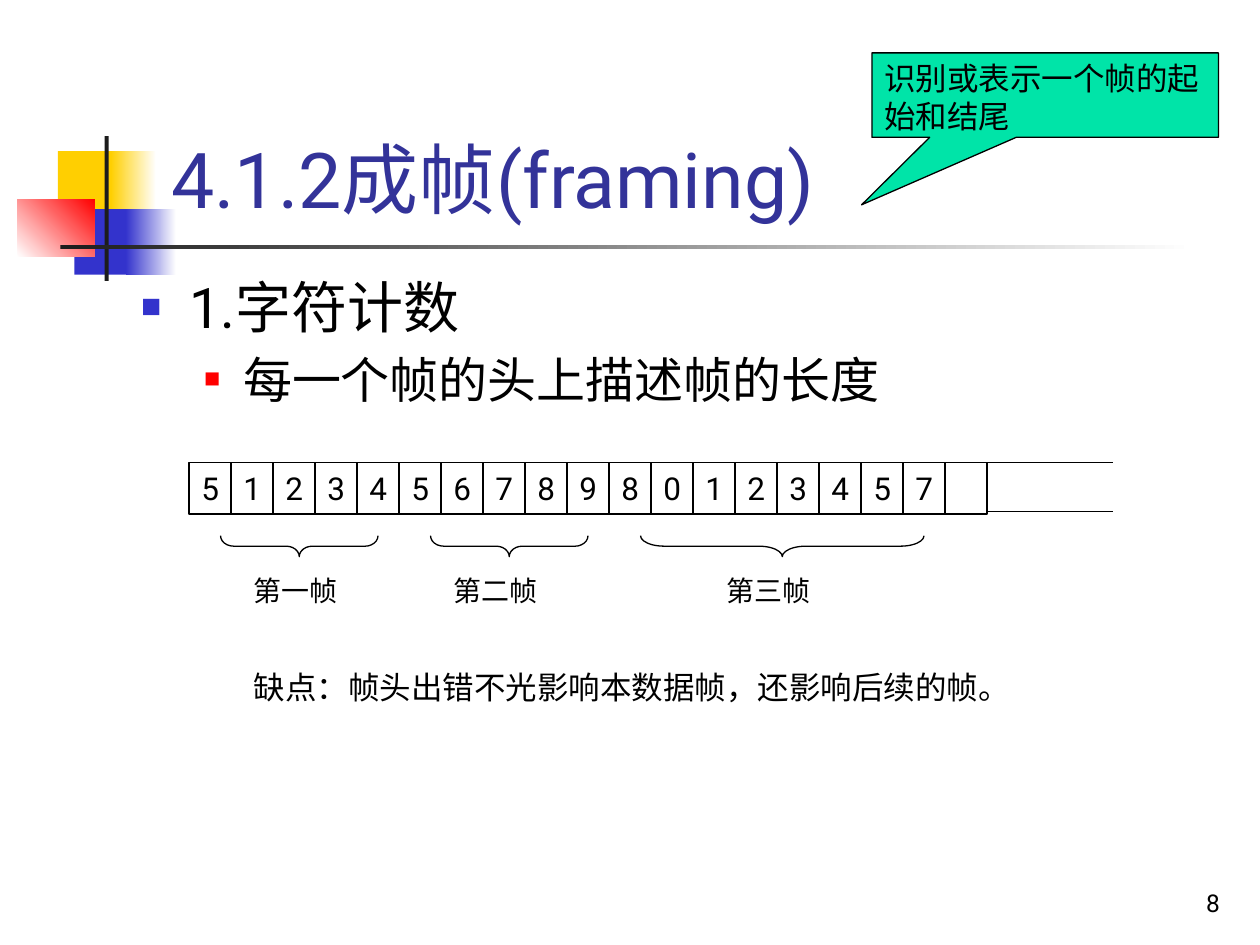
from lxml.etree import SubElement as Sub
from pptx import Presentation
from pptx.dml.color import RGBColor
from pptx.enum.shapes import MSO_CONNECTOR as Link, MSO_SHAPE as Form
from pptx.enum.text import MSO_ANCHOR as Anchor, PP_ALIGN as Align
from pptx.oxml.ns import qn
from pptx.util import Inches, Pt

deck = Presentation()
deck.slide_width, deck.slide_height = Inches(10), Inches(7.5)
col, row = deck.slide_width / 30, deck.slide_height / 30
slide = deck.slides.add_slide(deck.slide_layouts[1])
shapes = slide.shapes
hue = RGBColor.from_string


def draw(form, x, y, w, h, fills=(), line=None):
    item = shapes.add_shape(form, int(x * col), int(y * row), int(w * col), int(h * row))
    item.shadow.inherit = False
    if len(fills) == 2:
        item.fill.gradient()
        item.fill.gradient_angle = 0
        for stop, tint, spot in zip(item.fill.gradient_stops, fills, (0, 1)):
            stop.color.rgb = hue(tint)
            stop.position = spot
    elif fills:
        item.fill.solid()
        item.fill.fore_color.rgb = hue(fills[0])
    else:
        item.fill.background()
    if line:
        item.line.color.rgb = hue(line)
        item.line.width = Pt(0.75)
    else:
        item.line.fill.background()
    return item


def write(item, text, size, tint="000000", align=Align.LEFT, anchor=Anchor.TOP):
    frame = item.text_frame
    frame.text = text
    frame.word_wrap = True
    frame.vertical_anchor = anchor
    for para in frame.paragraphs:
        para.alignment = align
        for run in para.runs:
            run.font.name = "Roboto"
            run.font.size = Pt(size)
            run.font.color.rgb = hue(tint)


for x, y, w, h, fills in [
    (1.38, 4.8, 1.44, 2.08, ["FFCF01"]),
    (2.64, 4.8, 1.08, 2.08, ["FFCF01", "FFFFFF"]),
    (1.77, 6.64, 1.38, 2.08, ["3333CC"]),
    (3, 6.64, 1.2, 2.08, ["3333CC", "FFFFFF"]),
    (0.42, 6.32, 1.83, 1.84, ["FFFFFF", "FF0000"]),
    (2.49, 4.32, 0.1, 4.6, ["1C1C1C"]),
    (1.44, 7.78, 27, 0.14, ["1C1C1C", "FFFFFF"]),
]:
    block = draw(Form.RECTANGLE, x, y, w, h, fills)
    if fills[-1] == "FF0000":
        block.fill.gradient_angle = 45

title, body = shapes.title, slide.placeholders[1]
for item, x, y, w, h in [(title, 3.78, 0.92, 25.56, 6.4), (body, 3.06, 8.44, 25.5, 5.84)]:
    item.left, item.top = int(x * col), int(y * row)
    item.width, item.height = int(w * col), int(h * row)
write(title, "4.1.2成帧(framing)", 44, "333399", anchor=Anchor.BOTTOM)
write(body, "1.字符计数\n每一个帧的头上描述帧的长度", 32)
looks = [(32, 0.38, 0.38, "3333CC", 60), (28, 0.81, 0.31, "FF0000", 55)]
for level, (para, look) in enumerate(zip(body.text_frame.paragraphs, looks)):
    size, left, hang, tint, share = look
    para.level = level
    para.runs[0].font.size = Pt(size)
    props = para._p.get_or_add_pPr()
    props.set("marL", str(Inches(left)))
    props.set("indent", str(-Inches(hang)))
    Sub(Sub(props, qn("a:buClr")), qn("a:srgbClr"), val=tint)
    Sub(props, qn("a:buSzPct"), val=str(share * 1000))
    Sub(props, qn("a:buChar"), char="■")

call = draw(Form.RECTANGULAR_CALLOUT, 20.76, 1.68, 8.25, 2.68, ["00E4A8"], "000000")
call.adjustments[0], call.adjustments[1] = -0.53, 1.3
write(call, "识别或表示一个帧的起始和结尾", 18)

for spot, digit in enumerate("512345678980123457"):
    write(draw(Form.RECTANGLE, 4.5 + spot, 14.68, 1, 1.64, line="000000"), digit, 18)
draw(Form.RECTANGLE, 22.5, 14.68, 1, 1.64, line="000000")

for y in (14.68, 16.24):
    edge = shapes.add_connector(
        Link.STRAIGHT, int(23.5 * col), int(y * row), int(26.5 * col), int(y * row))
    edge.line.color.rgb = hue("000000")
    edge.line.width = Pt(0.75)
    Sub(edge._element.spPr, qn("a:effectLst"))

for start, size in [(0, 5), (5, 5), (10, 8)]:
    span = size - 1.25
    tall = span * col / row
    mid = 5.25 + start + span / 2
    brace = draw(Form.RIGHT_BRACE, mid - 0.25, 17.34 - tall / 2, 0.5, tall, line="000000")
    brace.rotation = 90
    brace.adjustments[0], brace.adjustments[1] = span / 6, 0.5

for x, y, w, h, text, size, align, anchor in [
    (5.75, 18, 3, 1.48, "第一帧", 16, Align.LEFT, Anchor.TOP),
    (10.5, 18, 3, 1.48, "第二帧", 16, Align.LEFT, Anchor.TOP),
    (17, 18, 3, 1.48, "第三帧", 16, Align.LEFT, Anchor.TOP),
    (5.75, 21, 19, 1.6, "缺点：帧头出错不光影响本数据帧，还影响后续的帧。", 18, Align.LEFT, Anchor.TOP),
    (23.1, 27.32, 6.24, 2, "8", 14, Align.RIGHT, Anchor.BOTTOM),
]:
    box = shapes.add_textbox(int(x * col), int(y * row), int(w * col), int(h * row))
    write(box, text, size, align=align, anchor=anchor)

deck.save("out.pptx")
